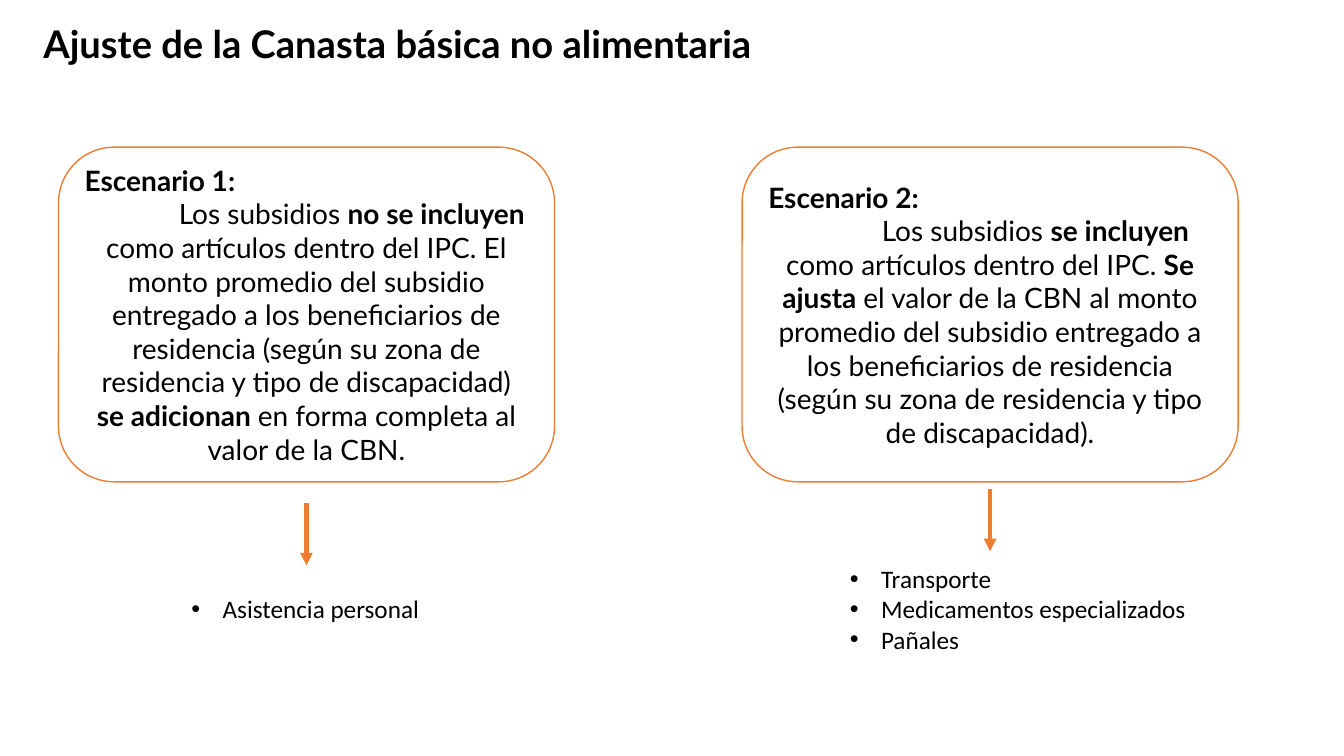
from lxml.etree import SubElement
from pptx import Presentation
from pptx.dml.color import RGBColor
from pptx.enum.shapes import MSO_CONNECTOR, MSO_SHAPE
from pptx.enum.text import MSO_ANCHOR, MSO_AUTO_SIZE, PP_ALIGN
from pptx.oxml.ns import qn
from pptx.util import Inches, Pt

COLOURS = {"text": "000000", "accent": "ED7D31", "background": "FFFFFF"}

SCENARIOS = [
    {
        "left": 0.58,
        "heading": "Escenario 1:",
        "spans": [
            ("Los subsidios ", False),
            ("no se incluyen ", True),
            ("como artículos dentro del IPC. El monto promedio del subsidio entregado a los "
             "beneficiarios de residencia (según su zona de residencia y tipo de discapacidad) ", False),
            ("se adicionan ", True),
            ("en forma completa al valor de la CBN.", False),
        ],
        "arrow_top": 4.99,
        "items": ["Asistencia personal"],
        "items_at": (1.8, 5.84, 4.21, 0.4),
    },
    {
        "left": 7.36,
        "heading": "Escenario 2:",
        "spans": [
            ("Los subsidios ", False),
            ("se incluyen ", True),
            ("como artículos dentro del IPC.", False),
            (" Se ajusta ", True),
            ("el valor de la CBN al monto promedio del subsidio entregado a los beneficiarios "
             "de residencia (según su zona de residencia y tipo de discapacidad).", False),
        ],
        "arrow_top": 4.85,
        "items": ["Transporte", "Medicamentos especializados", "Pañales"],
        "items_at": (8.33, 5.54, 4.21, 1.01),
    },
]
BOX_TOP, BOX_WIDTH, BOX_HEIGHT = 1.46, 4.92, 3.32
ARROW_LENGTH = 0.62


def colour(name):
    return RGBColor.from_string(COLOURS[name])


class SlideBuilder:
    def __init__(self, page):
        self.page = page
        self.heading_font = "Lato"
        self.list_font = "Calibri"

    def style(self, span, font, size, bold=False):
        span.font.name = font
        span.font.size = Pt(size)
        span.font.bold = bold
        span.font.color.rgb = colour("text")

    def title(self, text, left, top, width, height):
        title = self.page.shapes.title
        title.left, title.top = Inches(left), Inches(top)
        title.width, title.height = Inches(width), Inches(height)
        frame = title.text_frame
        frame.text = text
        frame.auto_size = MSO_AUTO_SIZE.NONE
        frame.vertical_anchor = MSO_ANCHOR.TOP
        paragraph = frame.paragraphs[0]
        paragraph.alignment = PP_ALIGN.LEFT
        paragraph.line_spacing = 0.8
        paragraph.space_before = Pt(10)
        self.style(paragraph.runs[0], self.heading_font, 27.2, True)

    def scenario_box(self, heading, spans, left, top, width, height):
        box = self.page.shapes.add_shape(
            MSO_SHAPE.ROUNDED_RECTANGLE, Inches(left), Inches(top), Inches(width), Inches(height))
        box.shadow.inherit = False
        box.fill.solid()
        box.fill.fore_color.rgb = colour("background")
        box.line.color.rgb = colour("accent")
        box.line.width = Pt(1)
        frame = box.text_frame
        frame.word_wrap = True
        frame.vertical_anchor = MSO_ANCHOR.MIDDLE
        frame.text = heading
        frame.paragraphs[0].alignment = PP_ALIGN.LEFT
        self.style(frame.paragraphs[0].runs[0], self.heading_font, 20, True)
        body = frame.add_paragraph()
        body.alignment = PP_ALIGN.CENTER
        body._p.get_or_add_pPr().set("indent", str(Inches(0.9)))
        for text, bold in spans:
            span = body.add_run()
            span.text = text
            self.style(span, self.heading_font, 20, bold)

    def down_arrow(self, centre, top, length):
        arrow = self.page.shapes.add_connector(
            MSO_CONNECTOR.STRAIGHT, Inches(centre), Inches(top), Inches(centre), Inches(top + length))
        arrow.line.color.rgb = colour("accent")
        arrow.line.width = Pt(3)
        SubElement(arrow.line._get_or_add_ln(), qn("a:tailEnd"), type="triangle")
        SubElement(arrow._element.spPr, qn("a:effectLst"))

    def bullet_list(self, items, left, top, width, height):
        box = self.page.shapes.add_textbox(Inches(left), Inches(top), Inches(width), Inches(height))
        frame = box.text_frame
        frame.word_wrap = True
        frame.auto_size = MSO_AUTO_SIZE.SHAPE_TO_FIT_TEXT
        frame.text = "\n".join(items)
        for paragraph in frame.paragraphs:
            properties = paragraph._p.get_or_add_pPr()
            properties.set("marL", str(Inches(0.31)))
            properties.set("indent", str(-Inches(0.31)))
            SubElement(properties, qn("a:buFont"), typeface="Arial")
            SubElement(properties, qn("a:buChar"), char="•")
            self.style(paragraph.runs[0], self.list_font, 18)


def main():
    deck = Presentation()
    deck.slide_width, deck.slide_height = Inches(13.33), Inches(7.5)
    builder = SlideBuilder(deck.slides.add_slide(deck.slide_layouts[5]))
    builder.title("Ajuste de la Canasta básica no alimentaria", 0.33, 0.24, 7.72, 0.76)
    for scenario in SCENARIOS:
        left = scenario["left"]
        builder.scenario_box(
            scenario["heading"], scenario["spans"], left, BOX_TOP, BOX_WIDTH, BOX_HEIGHT)
        builder.down_arrow(left + BOX_WIDTH / 2, scenario["arrow_top"], ARROW_LENGTH)
        builder.bullet_list(scenario["items"], *scenario["items_at"])
    deck.save("out.pptx")


if __name__ == "__main__":
    main()
